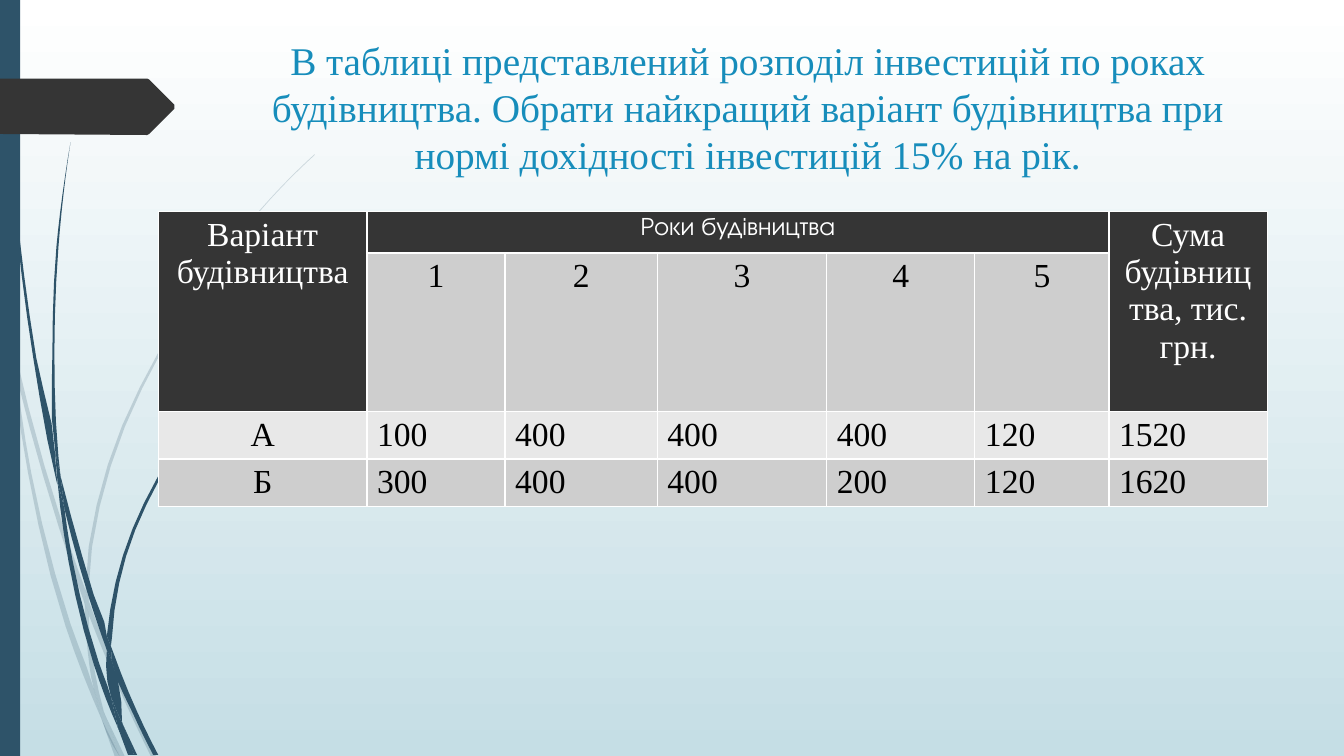
"""Build the slide comparing two construction investment options by year."""
from dataclasses import dataclass
from math import dist, hypot

from lxml.etree import SubElement
from pptx import Presentation
from pptx.dml.color import RGBColor
from pptx.enum.shapes import MSO_SHAPE
from pptx.enum.text import MSO_ANCHOR, MSO_AUTO_SIZE, PP_ALIGN
from pptx.oxml.ns import qn
from pptx.util import Inches, Pt

Point = tuple[float, float]
Edge = tuple[Point, ...]


@dataclass(frozen=True)
class Theme:
    serif: str = "Times New Roman"
    sans: str = "TeX Gyre Adventor"
    accent: str = "178DBB"
    navy: str = "2E5369"
    charcoal: str = "353535"
    light_band: str = "E8E8E8"
    dark_band: str = "CECECE"
    white: str = "FFFFFF"
    black: str = "000000"
    background_end: str = "C5DEE5"
    title_size: int = 28
    cell_size: int = 24
    years_size: int = 18


@dataclass(frozen=True)
class Outline:
    edges: tuple[Edge, ...]


@dataclass(frozen=True)
class TextStyle:
    color: str
    font: str
    size: int
    alignment: PP_ALIGN


THEME = Theme()
TITLE = ("В таблиці представлений розподіл інвестицій по роках будівництва. "
         "Обрати найкращий варіант будівництва при нормі дохідності інвестицій 15% на рік.")
COLUMN_WIDTHS = (2.07, 1.37, 1.51, 1.68, 1.47, 1.33, 1.57)
ROW_HEIGHTS = (0.41, 1.57, 0.47, 0.47)
ROWS = (
    ("Варіант будівництва", "Роки будівництва", "", "", "", "", "Сума будівництва, тис. грн."),
    ("", "1", "2", "3", "4", "5", ""),
    ("А", "100", "400", "400", "400", "120", "1520"),
    ("Б", "300", "400", "400", "200", "120", "1620"),
)
MERGES = (((0, 0), (1, 0)), ((0, 1), (0, 5)), ((0, 6), (1, 6)))

PALE_STEMS = (
    Outline((((0.11, 3.5), (0.09, 3.22), (0, 2.82)), ((0, 2.99), (0.1, 3.44), (0.11, 3.5)))),
    Outline((((0.17, 3.76), (0.58, 5.22), (0.84, 5.99)),
             ((0.85, 5.86), (0.62, 5.2), (0.14, 3.45)))),
    Outline((((0.88, 6.1), (1.23, 6.94), (1.5, 7.51)),
             ((1.55, 7.51), (1.27, 6.92), (0.92, 6.07), (0.88, 5.96)))),
    Outline((((1.19, 7.51), (1.24, 7.51)), ((1.05, 7.11),))),
    Outline((((0.11, 3.5), (0.28, 4.7), (0.65, 6.21), (0.92, 6.93), (1.01, 7.14)),
             ((0.99, 7.07), (0.93, 6.83), (0.7, 6.19), (0.31, 4.69), (0.17, 3.76)))),
    Outline((((0.84, 5.99), (0.87, 6.46), (0.93, 6.83), (0.96, 6.92), (1.05, 7.11)),
             ((1.03, 7.06), (0.91, 6.46), (0.88, 6.1), (0.88, 6.08)))),
    Outline((((0.88, 5.96), (0.88, 5.84), (1.1, 4.62), (1.6, 3.49), (2.29, 2.45),
              (2.68, 1.98), (2.9, 1.75), (3.12, 1.54)),
             ((3.12, 1.53), (2.89, 1.75), (2.68, 1.97), (2.28, 2.44), (1.58, 3.48),
              (1.07, 4.61), (0.85, 5.84), (0.85, 5.86)))),
    Outline((((1.01, 7.14), (1.14, 7.51)), ((1.19, 7.51),))),
    Outline((((0.88, 6.08), (0.88, 6.1)), ((0.88, 5.96), (0.85, 5.86)), ((0.84, 5.99),))),
    Outline((((0.93, 6.83), (0.99, 7.07), (1.01, 7.14), (1.19, 7.51)),
             ((1.05, 7.11), (0.96, 6.92)))),
)
DARK_STEMS = (
    Outline((((0.03, 0), (0.04, 0.48), (0.07, 1.1), (0.17, 2.33), (0.33, 3.55),
              (0.56, 4.77), (0.57, 4.81)),
             ((0.55, 4.57), (0.55, 4.53), (0.36, 3.55), (0.19, 2.32), (0.08, 1.09),
              (0.05, 0.48), (0.04, 0)))),
    Outline((((0.64, 5.05), (0.88, 5.92), (1.06, 6.45)),
             ((1.06, 6.33), (1.06, 6.31), (0.93, 5.9), (0.6, 4.72)))),
    Outline((((1.1, 6.41), (1.11, 6.56), (1.32, 7.08), (1.52, 7.49)),
             ((1.57, 7.49), (1.36, 7.06), (1.13, 6.49)))),
    Outline((((0.57, 4.77), (0.68, 5.57), (0.93, 6.59), (1.11, 7.08), (1.17, 7.22)),
             ((1.16, 7.17), (1.1, 6.91), (0.98, 6.57), (0.72, 5.56), (0.64, 5.05)))),
    Outline((((0.6, 4.72), (0.58, 4.53), (0.54, 3.49), (0.58, 2.45), (0.63, 1.93), (0.7, 1.41)),
             ((0.7, 1.41), (0.62, 1.93), (0.56, 2.45), (0.52, 3.49), (0.55, 4.49), (0.6, 4.72)))),
    Outline((((1.33, 7.49), (1.36, 7.49)), ((1.22, 7.19),))),
    Outline((((0.57, 4.77), (0.64, 5.05)), ((0.6, 4.72), (0.55, 4.49)), ((0.55, 4.53),))),
    Outline((((1.11, 6.33), (1.25, 5.52), (1.58, 4.76), (2.05, 4.06), (2.31, 3.74),
              (2.45, 3.59), (2.61, 3.44)),
             ((2.6, 3.44), (2.45, 3.58), (2.31, 3.73), (2.04, 4.05), (1.56, 4.74),
              (1.22, 5.51), (1.06, 6.31)), ((1.1, 6.41),))),
    Outline((((1.17, 7.22), (1.27, 7.49)), ((1.31, 7.49),))),
    Outline((((1.06, 6.45), (1.1, 6.91), (1.16, 7.06), (1.22, 7.19)),
             ((1.21, 7.16), (1.11, 6.56), (1.09, 6.51)))),
    Outline((((1.06, 6.45), (1.09, 6.51), (1.11, 6.56)), ((1.1, 6.41), (1.06, 6.31)))),
    Outline((((1.1, 6.91), (1.16, 7.17), (1.17, 7.22), (1.3, 7.49)),
             ((1.33, 7.49), (1.22, 7.19), (1.16, 7.06)))),
)
PAGE_TAG = Outline((((0, 0.78), (1.46, 0.78)), ((1.48, 0.79), (1.73, 1.04)),
                    ((1.73, 1.08), (1.48, 1.33)), ((1.46, 1.34), (0, 1.33))))


def unit(x: float, y: float) -> Point:
    return x / hypot(x, y), y / hypot(x, y)


def edge_directions(edge: Edge) -> list[Point]:
    lengths = [dist(a, b) for a, b in zip(edge, edge[1:])]
    chords = [unit(b[0] - a[0], b[1] - a[1]) for a, b in zip(edge, edge[1:])]
    inner = [unit(*(a * after + b * before for a, b in zip(first, second)))
             for first, second, before, after in zip(chords, chords[1:], lengths, lengths[1:])]
    if not inner:
        return chords * 2
    ends = [unit(*(2 * c - d for c, d in zip(chords[i], inner[i]))) for i in (0, -1)]
    return [ends[0], *inner, ends[1]]


def smooth_edge(edge: Edge) -> list[Point]:
    points, directions = [edge[0]], edge_directions(edge)
    for index, (start, end) in enumerate(zip(edge, edge[1:])):
        reach = dist(start, end) / 3
        steps = 3 if len(edge) > 2 and reach > 0.1 else 1
        for t in (step / steps for step in range(1, steps + 1)):
            points.append(tuple(
                (1 - t) ** 3 * a + 3 * t * (1 - t) ** 2 * (a + reach * u)
                + 3 * t ** 2 * (1 - t) * (b - reach * v) + t ** 3 * b
                for a, b, u, v in zip(start, end, directions[index], directions[index + 1])))
    return points


def paint(shape, color: str, opacity: int = 100) -> None:
    shape.shadow.inherit = False
    shape.fill.solid()
    shape.fill.fore_color.rgb = RGBColor.from_string(color)
    shape.line.fill.background()
    if opacity < 100:
        fill_color = shape._element.spPr.find(qn("a:solidFill"))[0]
        SubElement(fill_color, qn("a:alpha"), val=str(opacity * 1000))


def draw_outline(shapes, outline: Outline, color: str, opacity: int = 100):
    points = [(Inches(x), Inches(y)) for edge in outline.edges for x, y in smooth_edge(edge)]
    builder = shapes.build_freeform(*points[0])
    builder.add_line_segments(points[1:], close=True)
    shape = builder.convert_to_shape()
    paint(shape, color, opacity)
    return shape


def write(text_frame, text: str, style: TextStyle) -> None:
    paragraph = text_frame.paragraphs[0]
    paragraph.alignment = style.alignment
    run = paragraph.add_run()
    run.text = text
    run.font.name, run.font.size, run.font.bold = style.font, Pt(style.size), False
    run.font.color.rgb = RGBColor.from_string(style.color)


def format_cell(cell, row: int, column: int, text: str) -> None:
    header = row == 0 or (row == 1 and column in (0, 6))
    years = (row, column) == (0, 1)
    band = THEME.light_band if row == 2 else THEME.dark_band
    properties = cell._tc.get_or_add_tcPr()
    for side in ("lnL", "lnR", "lnT", "lnB"):
        line = SubElement(properties, qn(f"a:{side}"), w=str(Pt(1)))
        SubElement(SubElement(line, qn("a:solidFill")), qn("a:srgbClr"), val=THEME.white)
    cell.fill.solid()
    cell.fill.fore_color.rgb = RGBColor.from_string(THEME.charcoal if header else band)
    if text:
        write(cell.text_frame, text, TextStyle(
            THEME.white if header else THEME.black, THEME.sans if years else THEME.serif,
            THEME.years_size if years else THEME.cell_size,
            PP_ALIGN.CENTER if row < 2 or column == 0 else PP_ALIGN.LEFT))


def add_investment_table(slide) -> None:
    table = slide.shapes.add_table(len(ROWS), len(COLUMN_WIDTHS), Inches(1.57), Inches(2.1),
                                   Inches(sum(COLUMN_WIDTHS)), Inches(sum(ROW_HEIGHTS))).table
    table.first_row = table.horz_banding = False
    for column, width in zip(table.columns, COLUMN_WIDTHS):
        column.width = Inches(width)
    for row, height in zip(table.rows, ROW_HEIGHTS):
        row.height = Inches(height)
    for start, end in MERGES:
        table.cell(*start).merge(table.cell(*end))
    for row, texts in enumerate(ROWS):
        for column, text in enumerate(texts):
            format_cell(table.cell(row, column), row, column, text)


def add_title(slide) -> None:
    title = slide.shapes.title
    title.left, title.top, title.width, title.height = map(Inches, (2.54, 0.31, 9.75, 1.69))
    frame = title.text_frame
    frame.word_wrap, frame.auto_size = True, MSO_AUTO_SIZE.NONE
    frame.vertical_anchor = MSO_ANCHOR.TOP
    write(frame, TITLE, TextStyle(THEME.accent, THEME.serif, THEME.title_size, PP_ALIGN.CENTER))


def decorate_layout(slide) -> None:
    layout_tree = slide.slide_layout.shapes._spTree
    for placeholder in list(slide.slide_layout.placeholders)[1:]:
        layout_tree.remove(placeholder._element)
    decorations = []
    for stems, opacity in ((PALE_STEMS, 20), (DARK_STEMS, 100)):
        group = slide.shapes.add_group_shape()
        for stem in stems:
            draw_outline(group.shapes, stem, THEME.navy, opacity)
        decorations.append(group)
    side_bar = slide.shapes.add_shape(MSO_SHAPE.RECTANGLE, 0, 0, Inches(0.2), Inches(7.5))
    paint(side_bar, THEME.navy)
    decorations += [side_bar, draw_outline(slide.shapes, PAGE_TAG, THEME.charcoal)]
    for shape in decorations:
        layout_tree.append(shape._element)


def main() -> None:
    presentation = Presentation()
    presentation.slide_width, presentation.slide_height = Inches(13.33), Inches(7.5)
    slide = presentation.slides.add_slide(presentation.slide_layouts[5])
    background = slide.background.fill
    background.gradient()
    background.gradient_angle = 270
    for stop, color in zip(background.gradient_stops, (THEME.white, THEME.background_end)):
        stop.color.rgb = RGBColor.from_string(color)
    decorate_layout(slide)
    add_title(slide)
    add_investment_table(slide)
    presentation.save("out.pptx")


if __name__ == "__main__":
    main()
